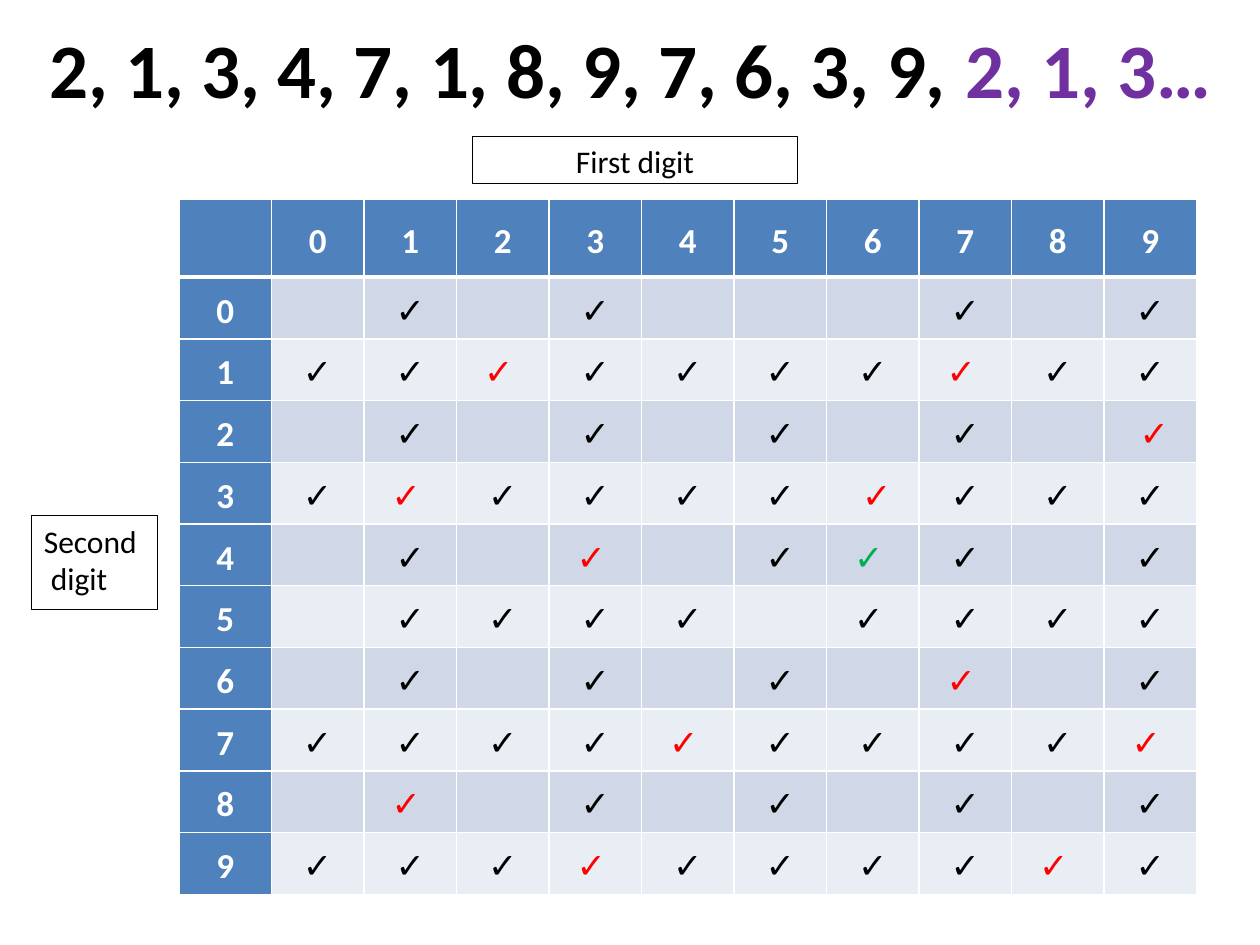
from lxml import etree
from pptx import Presentation
from pptx.dml.color import RGBColor
from pptx.enum.shapes import MSO_SHAPE
from pptx.enum.text import MSO_ANCHOR, PP_ALIGN
from pptx.oxml.ns import qn
from pptx.util import Inches, Pt


def style(font, size, color, bold=False):
    font.name = "Calibri"
    font.size = Pt(size)
    font.bold = bold
    font.color.rgb = RGBColor.from_string(color)


def add_border(cell, side, points):
    properties = cell._tc.get_or_add_tcPr()
    line = etree.SubElement(properties, qn(f"a:ln{side}"), w=str(Pt(points)))
    fill = etree.SubElement(line, qn("a:solidFill"))
    etree.SubElement(fill, qn("a:srgbClr"), val="FFFFFF")


presentation = Presentation()
presentation.slide_width = Inches(10)
presentation.slide_height = Inches(7.5)
slide = presentation.slides.add_slide(presentation.slide_layouts[5])

title = slide.shapes.title
title.left, title.top = Inches(0.29), Inches(0.12)
title.width, title.height = Inches(9.5), Inches(0.84)
title.text_frame.word_wrap = False
title.text_frame.vertical_anchor = MSO_ANCHOR.TOP
paragraph = title.text_frame.paragraphs[0]
paragraph.alignment = PP_ALIGN.LEFT
for text, color in [
    ("2, 1, 3, 4, 7, 1, 8, 9, 7, 6, 3, 9, ", "000000"),
    ("2, 1, 3…", "7030A0"),
]:
    run = paragraph.add_run()
    run.text = text
    style(run.font, 44, color, True)

MARKS = {
    "x": ("✓", "000000"),
    "n": ("✓ ", "000000"),
    "r": ("✓ ", "FF0000"),
    "R": (" ✓", "FF0000"),
    "g": ("✓ ", "00B050"),
}
GRID = [
    ".x.x...x.x",
    "xxrxxxxrxx",
    ".x.x.x.x.R",
    "xrxxxxRxxx",
    ".x.r.xgx.x",
    ".xxxx.nxxx",
    ".x.x.x.r.x",
    "xxxxrxxxxr",
    ".r.x.x.x.x",
    "xxxrxxxxrx",
]
digits = [(str(digit), "FFFFFF") for digit in range(10)]
rows = [[None] + digits]
for label, marks in zip(digits, GRID):
    rows.append([label] + [MARKS.get(mark) for mark in marks])

frame = slide.shapes.add_table(
    len(rows), 11, Inches(1.42), Inches(1.58), Inches(8.08), Inches(5.53)
)
table = frame.table
for column in table.columns:
    column.width = Inches(8.08 / 11)
for row_index, row in enumerate(rows):
    table.rows[row_index].height = Inches(0.49 if row_index else 0.62)
    band = "D0D8E8" if row_index % 2 else "E9EDF4"
    for column_index, content in enumerate(row):
        cell = table.cell(row_index, column_index)
        cell.margin_left = cell.margin_right = Inches(0.04)
        cell.margin_top = cell.margin_bottom = 0
        cell.vertical_anchor = MSO_ANCHOR.MIDDLE
        for side in "LRTB":
            thick = (row_index, side) in [(0, "B"), (1, "T")]
            add_border(cell, side, 3 if thick else 1)
        is_header = row_index == 0 or column_index == 0
        cell.fill.solid()
        cell.fill.fore_color.rgb = RGBColor.from_string("4F81BD" if is_header else band)
        if content:
            text, color = content
            cell.text_frame.text = text
            paragraph = cell.text_frame.paragraphs[0]
            paragraph.alignment = PP_ALIGN.CENTER
            paragraph.line_spacing = 1.15
            style(paragraph.runs[0].font, 20, color, True)

for text, left, top, width, height, alignment in [
    ("First digit", 3.75, 1.08, 2.58, 0.38, PP_ALIGN.CENTER),
    ("Second\n digit", 0.25, 4.09, 1, 0.75, PP_ALIGN.LEFT),
]:
    shape = slide.shapes.add_shape(
        MSO_SHAPE.RECTANGLE, Inches(left), Inches(top), Inches(width), Inches(height)
    )
    shape.shadow.inherit = False
    shape.fill.solid()
    shape.fill.fore_color.rgb = RGBColor.from_string("FFFFFF")
    shape.line.color.rgb = RGBColor.from_string("000000")
    shape.line.width = Pt(0.5)
    shape.text_frame.word_wrap = True
    shape.text_frame.vertical_anchor = MSO_ANCHOR.TOP
    shape.text_frame.text = text
    for paragraph in shape.text_frame.paragraphs:
        paragraph.alignment = alignment
        style(paragraph.runs[0].font, 18, "000000")

presentation.save("out.pptx")
